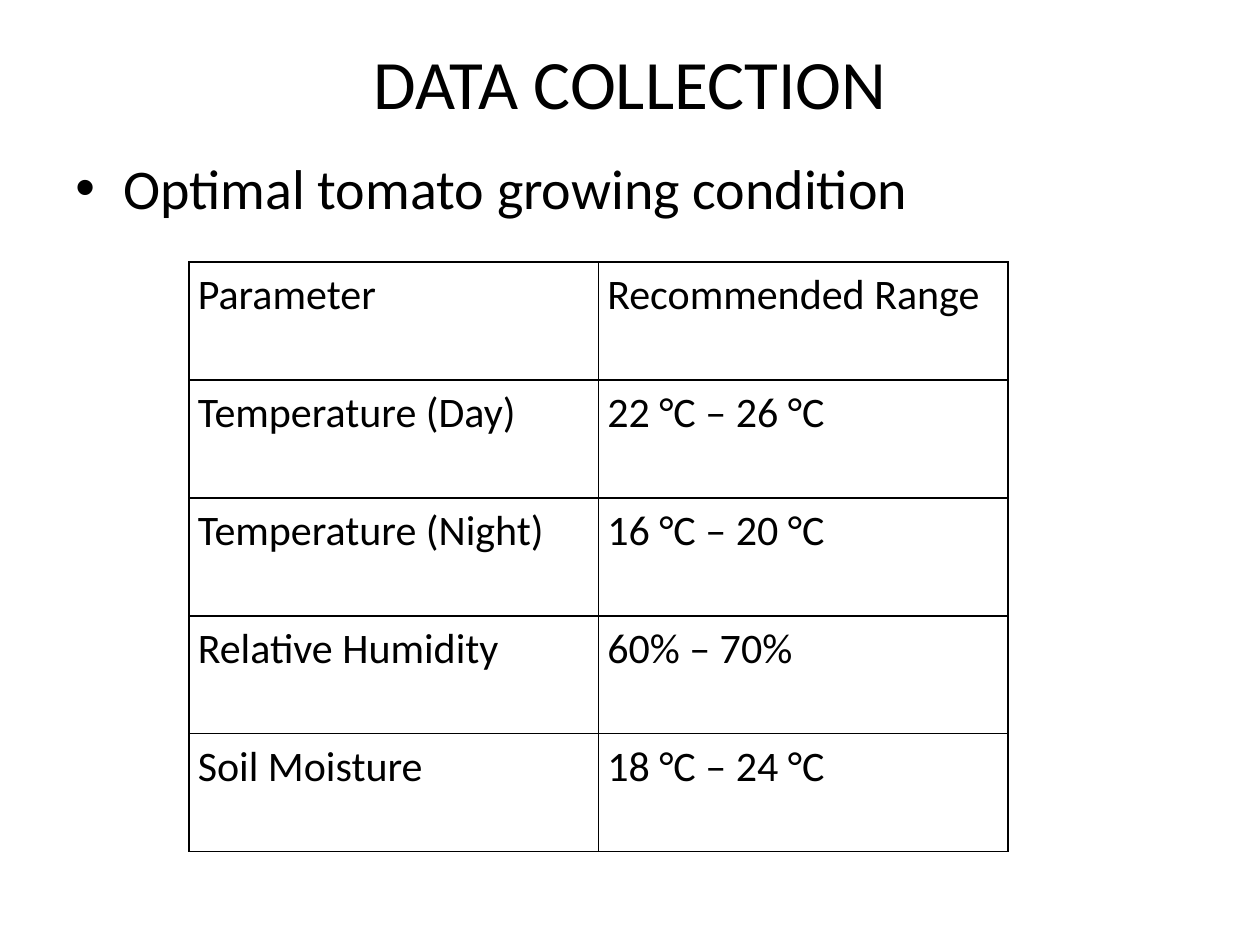
from lxml.etree import SubElement
from pptx import Presentation
from pptx.dml.color import RGBColor
from pptx.enum.text import MSO_ANCHOR, PP_ALIGN
from pptx.oxml.ns import qn
from pptx.util import Inches, Pt

BLACK = RGBColor(0, 0, 0)
ROWS = [
    ("Parameter", "Recommended Range"),
    ("Temperature (Day)", "22 °C – 26 °C"),
    ("Temperature (Night)", "16 °C – 20 °C"),
    ("Relative Humidity", "60% – 70%"),
    ("Soil Moisture", "18 °C – 24 °C"),
]


def style(p, size):
    for r in p.runs:
        r.font.name = "Calibri"
        r.font.size = Pt(size)
        r.font.color.rgb = BLACK


def add_borders(cell):
    """Put a 1 pt black line on all four sides, ahead of the cell's fill."""
    tcPr = cell._tc.get_or_add_tcPr()
    for i, side in enumerate(("lnL", "lnR", "lnT", "lnB")):
        ln = SubElement(tcPr, qn(f"a:{side}"), w=str(Pt(1)))
        fill = SubElement(ln, qn("a:solidFill"))
        SubElement(fill, qn("a:srgbClr"), val=str(BLACK))
        tcPr.insert(i, ln)


prs = Presentation()
prs.slide_width, prs.slide_height = Inches(10), Inches(7.5)
s = prs.slides.add_slide(prs.slide_layouts[6])

# Title
title = s.shapes.add_textbox(Inches(0.5), Inches(0.3), Inches(9), Inches(0.7))
tf = title.text_frame
tf.word_wrap = True
tf.vertical_anchor = MSO_ANCHOR.MIDDLE
tf.text = "DATA COLLECTION"
p = tf.paragraphs[0]
p.alignment = PP_ALIGN.CENTER
style(p, 39.6)

# Bullet
body = s.shapes.add_textbox(Inches(0.5), Inches(1.17), Inches(9), Inches(5.83))
tf = body.text_frame
tf.word_wrap = True
tf.text = "Optimal tomato growing condition"
p = tf.paragraphs[0]
pPr = p._p.get_or_add_pPr()
pPr.set("marL", str(Inches(0.38)))
pPr.set("indent", str(-Inches(0.38)))
SubElement(pPr, qn("a:buFont"), typeface="Arial")
SubElement(pPr, qn("a:buChar"), char="•")
style(p, 32)

# Growing conditions
row_height = Inches(0.936)
frame = s.shapes.add_table(len(ROWS), 2, Inches(1.5), Inches(2.08),
                           Inches(6.5), row_height * len(ROWS))
table = frame.table
table.first_row = table.horz_banding = False
for row, texts in zip(table.rows, ROWS):
    row.height = row_height
    for cell, text in zip(row.cells, texts):
        cell.fill.background()
        add_borders(cell)
        cell.margin_left = cell.margin_right = Inches(0.07)
        cell.margin_top = cell.margin_bottom = 0
        cell.text = text
        p = cell.text_frame.paragraphs[0]
        p.alignment = PP_ALIGN.JUSTIFY
        p.line_spacing = 1.15
        style(p, 24)

prs.save("out.pptx")
